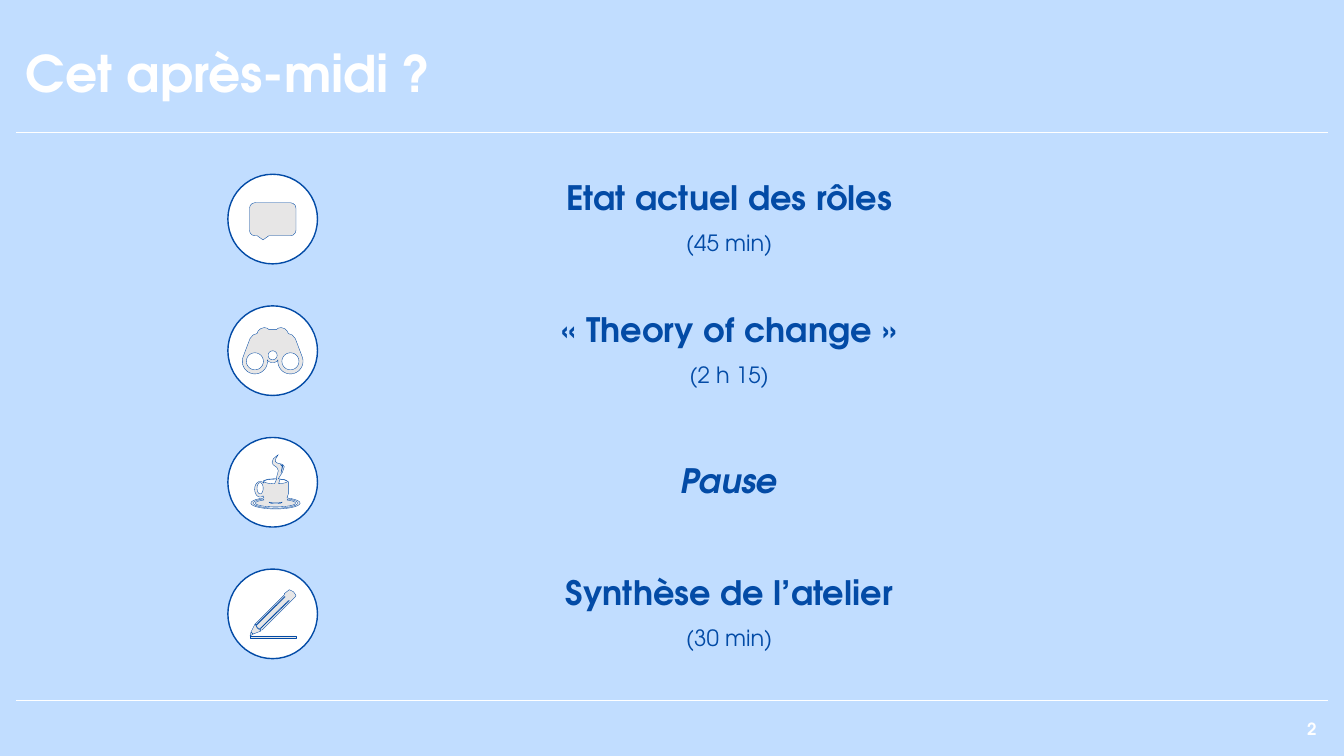
"""Build the afternoon agenda slide: four icon badges with their topics."""
from math import cos, radians, sin

from pptx import Presentation
from pptx import util as u
from pptx.dml.color import RGBColor
from pptx.enum import shapes, text
from pptx.oxml import parse_xml

SKY = RGBColor(0xC1, 0xDD, 0xFF)
BLUE = RGBColor(0x03, 0x4B, 0xA6)
GREY = RGBColor(0xE7, 0xE6, 0xE6)
WHITE = RGBColor(0xFF, 0xFF, 0xFF)
FONT = "TeX Gyre Adventor"
EFFECTS = '<a:effectLst xmlns:a="http://schemas.openxmlformats.org/drawingml/2006/main"/>'
CENTER_X, FIRST_Y, ROW_STEP, BADGE = 194.8, 156.5, 94, 64


def arc(x, y, rx, ry, start=0, end=360):
    """Return points along an elliptical arc, angles in degrees."""
    angles = [radians(start + (end - start) * i / 24) for i in range(25)]
    return [(x + rx * cos(a), y + ry * sin(a)) for a in angles]


def add_text(left, top, width, height, lines, align):
    """Add a text box; each line is (words, font format, paragraph format)."""
    frame = slide.shapes.add_textbox(u.Pt(left), u.Pt(top), u.Pt(width), u.Pt(height)).text_frame
    frame.word_wrap = True
    frame.vertical_anchor = text.MSO_ANCHOR.MIDDLE
    for index, (words, font_format, paragraph_format) in enumerate(lines):
        paragraph = frame.add_paragraph() if index else frame.paragraphs[0]
        paragraph.alignment = align
        for name, value in paragraph_format.items():
            setattr(paragraph, name, value)
        run = paragraph.add_run()
        run.text = words
        run.font.name = FONT
        for name, value in font_format.items():
            setattr(run.font.color if name == "rgb" else run.font, name, value)


presentation = Presentation()
presentation.slide_width, presentation.slide_height = u.Pt(960), u.Pt(540)
slide = presentation.slides.add_slide(presentation.slide_layouts[6])
slide.background.fill.solid()
slide.background.fill.fore_color.rgb = SKY

for y in (94.5, 500.25):
    rule = slide.shapes.add_connector(
        shapes.MSO_CONNECTOR.STRAIGHT, u.Pt(11.5), u.Pt(y), u.Pt(948.5), u.Pt(y))
    rule.line.color.rgb = WHITE
    rule.line.width = u.Pt(0.75)
    rule._element.spPr.append(parse_xml(EFFECTS))

title_font = {"size": u.Pt(36), "bold": True, "rgb": WHITE}
number_font = {"size": u.Pt(12), "bold": True, "rgb": WHITE}
topic_font = {"size": u.Pt(24), "bold": True, "rgb": BLUE}
duration_font = {"size": u.Pt(16), "bold": False, "rgb": BLUE}
spacing = {"line_spacing": 0.9, "space_before": u.Pt(10)}
add_text(11.5, 23, 708.5, 63.4, [("Cet après-midi ?", title_font, {"line_spacing": 0.9})],
         text.PP_ALIGN.LEFT)
add_text(731.5, 506.2, 216, 28.8, [("2", number_font, {})], text.PP_ALIGN.RIGHT)

half_binoculars = [
    (2.5, -15), (4, -16.1), (6, -16.5), (8.5, -15.8), (10.3, -14.2), (11.2, -12.2),
    (14, -11.2), (16.2, -8.6), *arc(12.7, 7.6, 9, 9, -20, 187), *arc(0, 3.3, 5.2, 5.2, 50, 90)]
binoculars = [
    half_binoculars + [(-x, y) for x, y in reversed(half_binoculars)],
    arc(-12.7, 7.6, 6.1, 6.1), arc(12.7, 7.6, 6.1, 6.1), arc(0, 3.3, 3.2, 3.2)]

cup = [
    [(4, -19.8), (2.2, -16.8), (1.8, -14.8), (3.5, -13.6), (7, -12.8), (8.3, -11.2),
     (7, -7.2), (4, -2.5), (8.5, -1.8), (11.2, -0.4), (11.2, 8.3),
     *arc(2, 14.9, 17.6, 4.2, -62, 242), (-6.9, 9.7), *arc(-8.9, 5, 4, 5.6, 65, 310),
     (-6.5, -1.2), (-3, -2.2), (2.5, -2.5), (4, -8.3), (3, -10.6), (0.3, -12.5),
     (-0.4, -14.4), (0.5, -16.8)],
    arc(2, 14.9, 15.8, 3.6, -55, 235) + arc(2, 14.9, 14.4, 2.7, 235, -55),
    arc(2.1, 14.1, 4.7, 1.3, 0, 180) + arc(2.1, 14.1, 4.7, 0.6, 180, 0),
    arc(-9, 4.3, 2.2, 4),
    arc(2.1, -0.6, 8.3, 1.7, 95, 275), arc(2.1, -0.6, 8.3, 1.7, -68, 75),
    [(5.4, -12.6), (6.8, -11.5), (6, -6.8), (7.4, -12)]]

pencil = [
    [(-16.2, 15.8), (16.6, 15.8), (16.6, 17.2), (-16.2, 17.2)],
    [(-15.5, 13), (-14.8, 13.7), (-14, 14.4), (-16.2, 15.8)],
    [(-12.6, 7.2), (-11.2, 10), (-8.3, 12.2), (-14, 14.4), (-15.5, 13)],
    [(-12.6, 7.2), (8.3, -13.7), (8.3, -14.5), (11.9, -17.3), (14.8, -15.8), (16.6, -13.3),
     (16.2, -12.2), (13.3, -9.4), (-7.6, 11.5), (-9, 11.5), (-8.3, 10.2), (11.9, -9.4),
     (11.2, -9.6), (-8.7, 10.1), (-9.7, 10.8), (-11.9, 8.6), (-10.6, 7.2), (9, -12.2),
     (8.3, -12.4), (-11.2, 7.2), (-12, 7.9)]]

agenda = [
    ("Etat actuel des rôles", "(45 min)", None),
    ("« Theory of change »", "(2 h 15)", binoculars),
    ("Pause", None, cup),
    ("Synthèse de l’atelier", "(30 min)", pencil)]

for row, (topic, duration, contours) in enumerate(agenda):
    center_y = FIRST_Y + row * ROW_STEP
    badge = slide.shapes.add_shape(
        shapes.MSO_SHAPE.OVAL, u.Pt(CENTER_X - BADGE / 2), u.Pt(center_y - BADGE / 2),
        u.Pt(BADGE), u.Pt(BADGE))
    if contours:
        outlines = [[(u.Pt(CENTER_X + x), u.Pt(center_y + y)) for x, y in contour]
                    for contour in contours]
        builder = slide.shapes.build_freeform(*outlines[0][0])
        for index, outline in enumerate(outlines):
            if index:
                builder.move_to(*outline[0])
            builder.add_line_segments(outline[1:], close=True)
        icon = builder.convert_to_shape()
    else:
        icon = slide.shapes.add_shape(
            shapes.MSO_SHAPE.ROUNDED_RECTANGULAR_CALLOUT, u.Pt(178.2), u.Pt(144.8),
            u.Pt(33.2), u.Pt(23.6))
    for shape, color, weight in ((badge, WHITE, 1), (icon, GREY, 0.25)):
        shape.shadow.inherit = False
        shape.fill.solid()
        shape.fill.fore_color.rgb = color
        shape.line.color.rgb = BLUE
        shape.line.width = u.Pt(weight)

    lines = [(topic, {**topic_font, "italic": duration is None}, spacing)]
    if duration:
        lines.append((duration, duration_font, spacing))
    add_text(244.8, center_y - BADGE / 2, 552.2, BADGE, lines, text.PP_ALIGN.CENTER)

presentation.save("out.pptx")
